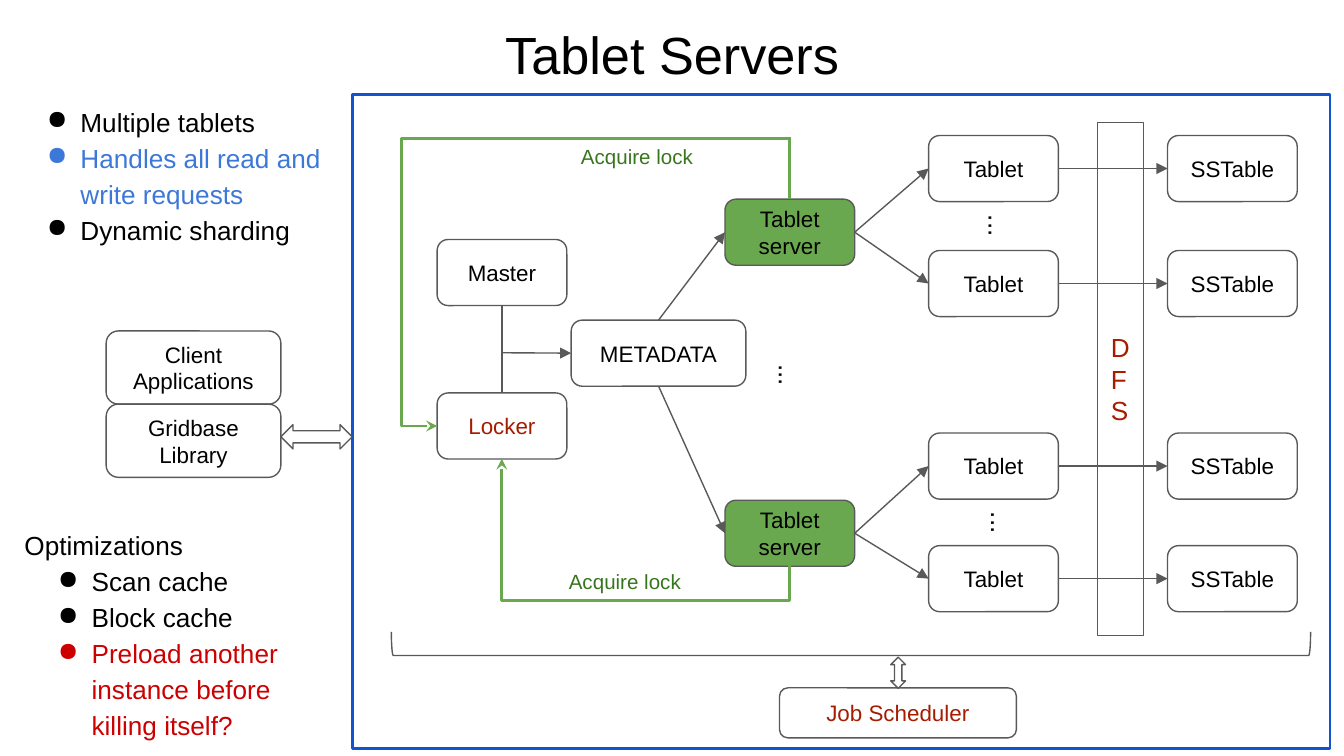
"""Build the Tablet Servers architecture slide."""
from lxml import etree
from pptx import Presentation
from pptx.dml.color import RGBColor
from pptx.enum.shapes import MSO_CONNECTOR, MSO_SHAPE
from pptx.enum.text import MSO_ANCHOR, PP_ALIGN
from pptx.oxml.ns import qn
from pptx.util import Pt

ROUND = MSO_SHAPE.ROUNDED_RECTANGLE
RECTANGLE = MSO_SHAPE.RECTANGLE
BRACKET = MSO_SHAPE.RIGHT_BRACKET
DOUBLE_ARROW = MSO_SHAPE.LEFT_RIGHT_ARROW
STRAIGHT, ELBOW = MSO_CONNECTOR.STRAIGHT, MSO_CONNECTOR.ELBOW
MIDDLE, TOP = MSO_ANCHOR.MIDDLE, MSO_ANCHOR.TOP
LEFT, CENTER = PP_ALIGN.LEFT, PP_ALIGN.CENTER
BLACK, GRAY, GREEN, DARK_GREEN = "000000", "595959", "6AA84F", "38761D"
BLUE, LIGHT_BLUE, RED, BROWN = "1155CC", "3C78D8", "CC0000", "A61C00"

deck = Presentation()
deck.slide_width, deck.slide_height = Pt(720), Pt(405)
page = deck.slides.add_slide(deck.slide_layouts[6])


def add_box(kind, bounds, items=(), size=12, color=BLACK, align=CENTER, anchor=MIDDLE,
            fill=None, line=GRAY, weight=0.75, rotation=0):
    """Add a shape, or a text box when kind is None, with (text, color, bulleted) items."""
    lengths = [Pt(value) for value in bounds]
    if kind is None:
        box = page.shapes.add_textbox(*lengths)
    else:
        box = page.shapes.add_shape(kind, *lengths)
        box.shadow.inherit = False
        box.line.color.rgb = RGBColor.from_string(line)
        box.line.width = Pt(weight)
        if fill:
            box.fill.solid()
            box.fill.fore_color.rgb = RGBColor.from_string(fill)
        else:
            box.fill.background()
    box.rotation = rotation
    frame = box.text_frame
    frame.word_wrap = True
    frame.vertical_anchor = anchor
    frame.margin_left = frame.margin_right = frame.margin_top = frame.margin_bottom = Pt(7.2)
    if isinstance(items, str):
        items = [(items, color, None)]
    for index, (text, tint, bulleted) in enumerate(items):
        para = frame.add_paragraph() if index else frame.paragraphs[0]
        para.text = text
        para.alignment = align
        if bulleted is not None:
            para.line_spacing = 1.15
        if bulleted:
            properties = para._p.get_or_add_pPr()
            properties.set("marL", str(Pt(36)))
            properties.set("indent", str(Pt(-18)))
            etree.SubElement(properties, qn("a:buChar"), char="●")
        for span in para.runs:
            span.font.name = "Arial"
            span.font.size = Pt(size)
            span.font.color.rgb = RGBColor.from_string(tint)
    return box


def add_line(start, end, kind=STRAIGHT, color=GRAY, weight=0.75, head=None, tail=None,
             bend=None, turn=0):
    """Add a connector with optional arrowheads, bend position and rotation."""
    connector = page.shapes.add_connector(kind, *[Pt(value) for value in (*start, *end)])
    connector.line.color.rgb = RGBColor.from_string(color)
    connector.line.width = Pt(weight)
    properties = connector._element.spPr
    for tag, arrow in (("a:headEnd", head), ("a:tailEnd", tail)):
        if arrow:
            etree.SubElement(connector.line._get_or_add_ln(), qn(tag), type=arrow, w="med", len="med")
    etree.SubElement(properties, qn("a:effectLst"))
    if bend:
        guides = properties.find(qn("a:prstGeom")).get_or_add_avLst()
        etree.SubElement(guides, qn("a:gd"), name="adj1", fmla=f"val {round(bend * 100000)}")
    if turn:
        properties.find(qn("a:xfrm")).set("rot", str(turn * 60000))


add_box(None, (24.5, 5, 671, 45.4), "Tablet Servers", size=28, anchor=TOP)
add_box(RECTANGLE, (188.9, 50.6, 523.6, 350.6), line=BLUE, weight=1.5)

node_width, node_height = 69.5, 35.4
master_x, server_x, tablet_x, sstable_x = 234.2, 388.4, 497.5, 625.5
server_right, tablet_right = server_x + node_width, tablet_x + node_width
master_middle, server_middle = master_x + node_width / 2, server_x + node_width / 2
metadata_x, metadata_y, metadata_width = 306, 171.5, 93.6
metadata_middle = metadata_x + metadata_width / 2
server_rows = {106.7: (72.6, 134.2), 268: (232, 292.3)}

for server_y, tablet_rows in server_rows.items():
    server_center = server_y + node_height / 2
    add_box(ROUND, (server_x, server_y, node_width, node_height), "Tablet server", fill=GREEN)
    for row_y in tablet_rows:
        row_center = row_y + node_height / 2
        add_box(ROUND, (tablet_x, row_y, node_width, node_height), "Tablet")
        add_box(ROUND, (sstable_x, row_y, node_width, node_height), "SSTable")
        add_line((server_right, server_center), (tablet_x, row_center), tail="triangle")
        add_line((tablet_right, row_center), (sstable_x, row_center), tail="triangle")
    metadata_edge = metadata_y + (node_height if server_y > metadata_y else 0)
    add_line((metadata_middle, metadata_edge), (server_x, server_center), tail="triangle")

for dots_x, dots_y in ((406.1, 189.4), (518.4, 109.4), (519.8, 268.6)):
    add_box(None, (dots_x, dots_y, 33.8, 31), "...", size=14, align=LEFT, anchor=TOP, rotation=90)

for text, color, bounds in (
    ("Job Scheduler", BROWN, (417.6, 368.5, 126.9, 26.8)),
    ("Master", BLACK, (master_x, 128.3, node_width, node_height)),
    ("Locker", BROWN, (master_x, 210.5, node_width, node_height)),
    ("METADATA", BLACK, (metadata_x, metadata_y, metadata_width, node_height)),
    ("Client Applications", BLACK, (56.9, 177.3, 93.6, 39.2)),
    ("Gridbase Library", BLACK, (56.9, 216.5, 93.6, 39.2)),
):
    add_box(ROUND, bounds, text, color=color)

add_box(RECTANGLE, (588, 65.5, 24.7, 275), "DFS", size=14, color=BROWN, align=LEFT)
add_box(BRACKET, (449.5, 98.6, 12.7, 492.5), rotation=90)
add_box(DOUBLE_ARROW, (472.8, 356.4, 16.7, 8), rotation=90)
add_box(DOUBLE_ARROW, (150.5, 227.5, 38.2, 13))

add_line((master_middle, 163.7), (master_middle, 210.5))
add_line((master_middle, 189), (metadata_x, 189.2), tail="triangle")
add_line((424, 74.2), (master_x, 228.2), ELBOW, GREEN, 1.5, tail="stealth", bend=1.1)
add_line((server_middle, 106.7), (server_middle, 74.5), color=GREEN, weight=1.5)
add_line((374.5, 197.3), (317.3, 351.4), ELBOW, GREEN, 1.5, head="stealth", bend=1.33, turn=270)

for label_x, label_y in ((294.5, 70.6), (288, 298.1)):
    add_box(None, (label_x, label_y, 93.6, 28.1), "Acquire lock", size=11, color=DARK_GREEN, anchor=TOP)

features = [
    ("Multiple tablets", BLACK, True),
    ("Handles all read and write requests", LIGHT_BLUE, True),
    ("Dynamic sharding", BLACK, True),
]
optimizations = [
    ("Optimizations", BLACK, False),
    ("Scan cache", BLACK, True),
    ("Block cache", BLACK, True),
    ("Preload another instance before killing itself?", RED, True),
]
add_box(None, (0, 32.4, 185.8, 121), features, size=14, align=LEFT)
add_box(None, (6, 278.6, 175, 121), optimizations, size=14, align=LEFT)

deck.save("out.pptx")
